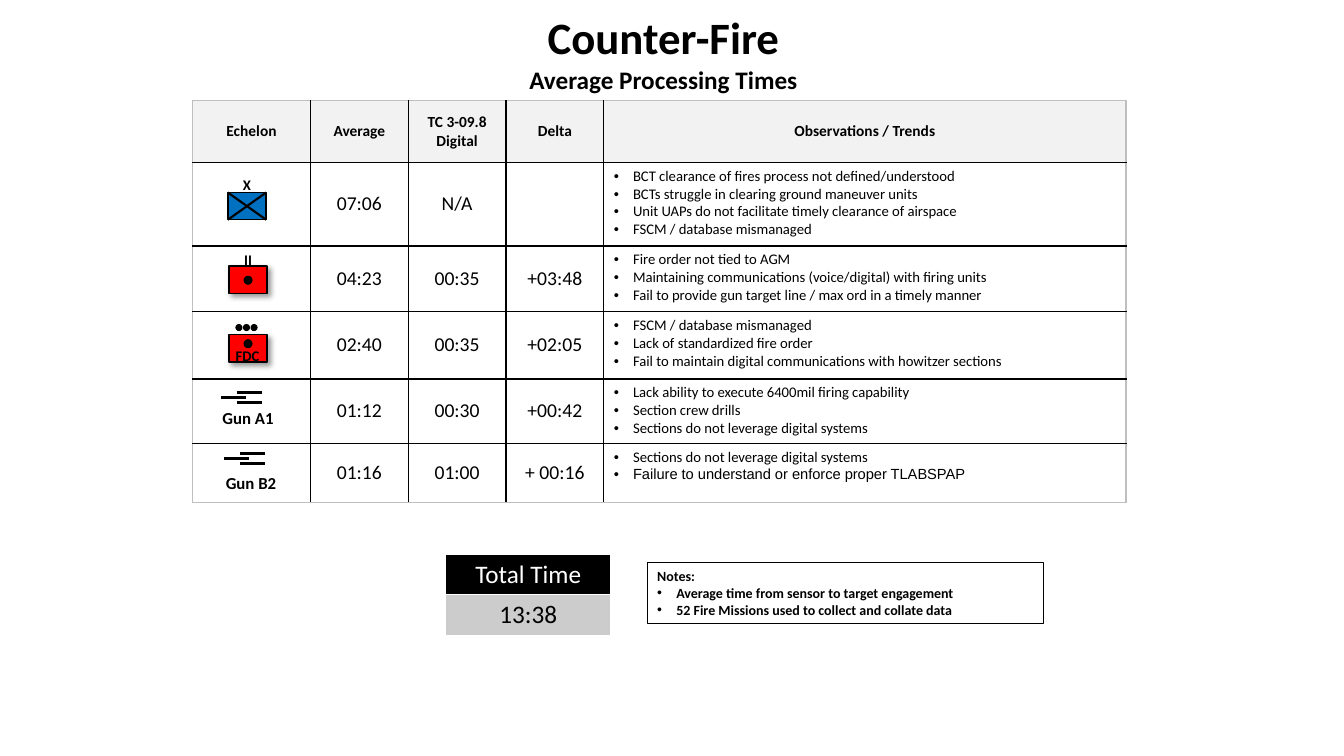
from dataclasses import dataclass

from lxml import etree
from pptx import Presentation
from pptx import util as u
from pptx.dml.color import RGBColor
from pptx.enum import shapes, text
from pptx.oxml import parse_xml
from pptx.oxml.ns import nsdecls, qn

PX = 9144  # 100 px to the inch


@dataclass(frozen=True)
class Theme:
    font: str = "Calibri"
    other_font: str = "Arial"
    black: str = "000000"
    white: str = "FFFFFF"
    header: str = "F2F2F2"
    edge: str = "BFBFBF"
    total: str = "CCCCCC"
    red: str = "FF0000"
    blue: str = "0070C0"
    title: float = 32
    subtitle: float = 18
    time: float = 14
    model: float = 12
    head: float = 11
    body: float = 10.5
    note: float = 10


THEME = Theme()
COLUMNS = [117, 97, 97, 97, 518]
ROWS = [61, 83, 65, 67, 64, 59]
HEADINGS = ["Echelon", "Average", "TC 3-09.8\nDigital", "Delta", "Observations / Trends"]
ECHELONS = [
    (["07:06", "N/A", ""],
     ["BCT clearance of fires process not defined/understood",
      "BCTs struggle in clearing ground maneuver units",
      "Unit UAPs do not facilitate timely clearance of airspace",
      "FSCM / database mismanaged"]),
    (["04:23", "00:35", "+03:48"],
     ["Fire order not tied to AGM",
      "Maintaining communications (voice/digital) with firing units",
      "Fail to provide gun target line / max ord in a timely manner"]),
    (["02:40", "00:35", "+02:05"],
     ["FSCM / database mismanaged",
      "Lack of standardized fire order",
      "Fail to maintain digital communications with howitzer sections"]),
    (["01:12", "00:30", "+00:42"],
     ["Lack ability to execute 6400mil firing capability",
      "Section crew drills",
      "Sections do not leverage digital systems"]),
    (["01:16", "01:00", "+ 00:16"],
     ["Sections do not leverage digital systems",
      "Failure to understand or enforce proper TLABSPAP"]),
]


def px(*lengths):
    return [u.Emu(round(length * PX)) for length in lengths]


def color(value):
    return RGBColor.from_string(value)


def write(frame, lines, size, bold=False, ink=THEME.black, centered=True, bullets_from=None):
    """Fill a text frame, one paragraph a line, with bullets from the given line on."""
    for index, line in enumerate(lines):
        paragraph = frame.paragraphs[0] if index == 0 else frame.add_paragraph()
        paragraph.alignment = text.PP_ALIGN.CENTER if centered else text.PP_ALIGN.LEFT
        if bullets_from is not None and index >= bullets_from:
            properties = paragraph._p.get_or_add_pPr()
            properties.set("marL", str(19 * PX))
            properties.set("indent", str(-19 * PX))
            etree.SubElement(properties, qn("a:buFont")).set("typeface", THEME.other_font)
            etree.SubElement(properties, qn("a:buChar")).set("char", "•")
        run = paragraph.add_run()
        run.text = line
        run.font.name, run.font.size, run.font.bold = THEME.font, u.Pt(size), bold
        run.font.color.rgb = color(ink)


def style_cell(cell, borders, fill=None):
    """Borders are colours in the order left, right, top, bottom."""
    properties = cell._tc.get_or_add_tcPr()
    for side, ink in zip("LRTB", borders):
        properties.append(parse_xml(
            f'<a:ln{side} {nsdecls("a")} w="12700"><a:solidFill>'
            f'<a:srgbClr val="{ink}"/></a:solidFill></a:ln{side}>'))
    if fill:
        cell.fill.solid()
        cell.fill.fore_color.rgb = color(fill)
    else:
        cell.fill.background()


def new_table(slide, left, top, columns, rows):
    table = slide.shapes.add_table(
        len(rows), len(columns), *px(left, top, sum(columns), sum(rows))).table
    table.first_row = table.horz_banding = False
    for column, width in zip(table.columns, columns):
        column.width = u.Emu(width * PX)
    for row, height in zip(table.rows, rows):
        row.height = u.Emu(height * PX)
    return table


def add_title(slide, left, top, width, height):
    title = slide.shapes.title
    title.left, title.top, title.width, title.height = px(left, top, width, height)
    frame = title.text_frame
    frame.auto_size, frame.word_wrap = text.MSO_AUTO_SIZE.NONE, True
    frame.vertical_anchor = text.MSO_ANCHOR.TOP
    write(frame, ["Counter-Fire", "Average Processing Times"], THEME.title, bold=True)
    frame.paragraphs[1].runs[0].font.size = u.Pt(THEME.subtitle)


def add_times_table(slide, left, top):
    table = new_table(slide, left, top, COLUMNS, ROWS)
    last_row, last_column = len(ROWS) - 1, len(COLUMNS) - 1
    for row in range(len(ROWS)):
        for column in range(len(COLUMNS)):
            outer = [column == 0, column == last_column, row == 0, row == last_row]
            cell = table.cell(row, column)
            style_cell(cell, [THEME.edge if side else THEME.black for side in outer],
                       THEME.header if row == 0 else None)
            cell.vertical_anchor = text.MSO_ANCHOR.MIDDLE
            if row == 0:
                write(cell.text_frame, HEADINGS[column].split("\n"), THEME.head, bold=True)
            elif column == last_column:
                cell.vertical_anchor = text.MSO_ANCHOR.TOP
                write(cell.text_frame, ECHELONS[row - 1][1], THEME.body,
                      centered=False, bullets_from=0)
            elif column and ECHELONS[row - 1][0][column - 1]:
                write(cell.text_frame, [ECHELONS[row - 1][0][column - 1]], THEME.time)
    final_run = table.cell(last_row, last_column).text_frame.paragraphs[-1].runs[0]
    final_run.font.name = THEME.other_font


def add_figure(group, kind, box, fill, weight):
    shape = group.shapes.add_shape(kind, *px(*box))
    shape.shadow.inherit = False
    shape.fill.solid()
    shape.fill.fore_color.rgb = color(fill)
    shape.line.color.rgb = color(THEME.black)
    shape.line.width = u.Pt(weight)
    return shape


def add_unit_frame(group, left, top, fill):
    return add_figure(group, shapes.MSO_SHAPE.RECTANGLE, (left, top, 38, 27), fill, 1)


def add_dot(group, left, top, size):
    add_figure(group, shapes.MSO_SHAPE.OVAL, (left, top, size, size), THEME.black, 0.75)


def add_line(group, start, end, weight):
    line = group.shapes.add_connector(shapes.MSO_CONNECTOR.STRAIGHT, *px(*start, *end))
    line.line.color.rgb = color(THEME.black)
    line.line.width = u.Pt(weight)
    etree.SubElement(line._element.spPr, qn("a:effectLst"))


def add_label(group, words, box, size):
    frame = group.shapes.add_textbox(*px(*box)).text_frame
    frame.word_wrap = True
    frame.margin_left = frame.margin_right = 0
    write(frame, [words], size, bold=True)


def add_brigade(group, left, top):
    add_label(group, "X", (left + 5, top - 22, 28, 28), THEME.body)
    add_unit_frame(group, left, top, THEME.blue)
    add_line(group, (left, top), (left + 38, top + 27), 1.5)
    add_line(group, (left, top + 27), (left + 38, top), 1.5)


def add_artillery(group, left, top, dot_drop):
    frame = add_unit_frame(group, left, top, THEME.red)
    effects = frame._element.spPr.find(qn("a:effectLst"))
    effects.append(parse_xml(
        f'<a:outerShdw {nsdecls("a")} blurRad="50800" dist="38100" dir="2700000">'
        '<a:srgbClr val="000000"><a:alpha val="40000"/></a:srgbClr></a:outerShdw>'))
    add_dot(group, left + 15, top + dot_drop, 8)


def add_battalion(group, left, top):
    add_artillery(group, left, top, 10)
    add_label(group, "II", (left, top - 20, 38, 28), THEME.body)


def add_fire_direction_center(group, left, top):
    add_artillery(group, left, top, 5)
    for index in range(3):
        add_dot(group, left + 7 + 7.5 * index, top - 10, 6)
    add_label(group, "FDC", (left - 22, top + 7, 81, 28), THEME.body)


def add_howitzer(group, left, top, model, label_drop):
    for shift, drop in [(16, 0), (16, 10), (0, 5)]:
        add_line(group, (left + shift, top + drop), (left + shift + 25, top + drop), 2.25)
    add_label(group, model, (left - 22, top + label_drop, 98, 30), THEME.model)


def add_symbols(slide, left, top):
    symbols = [
        (add_brigade, 35, 30, ()),
        (add_battalion, 36, 20, ()),
        (add_fire_direction_center, 36, 23, ()),
        (add_howitzer, 28, 13, ("Gun A1", 11)),
        (add_howitzer, 31, 10, ("Gun B2", 14)),
    ]
    for row, (draw, shift, drop, details) in enumerate(symbols, start=1):
        group = slide.shapes.add_group_shape()
        draw(group, left + shift, top + sum(ROWS[:row]) + drop, *details)


def add_total(slide, left, top):
    table = new_table(slide, left, top, [164], [40, 40])
    rows = [("Total Time", THEME.white, THEME.black), ("13:38", THEME.black, THEME.total)]
    for row, (words, ink, fill) in enumerate(rows):
        cell = table.cell(row, 0)
        style_cell(cell, [THEME.white] * 4, fill)
        write(cell.text_frame, [words], THEME.subtitle, ink=ink)


def add_notes_box(slide, *box):
    shape = add_figure(slide, shapes.MSO_SHAPE.RECTANGLE, box, THEME.white, 0.75)
    shape.fill.background()
    shape.text_frame.word_wrap = True
    shape.text_frame.vertical_anchor = text.MSO_ANCHOR.TOP
    write(shape.text_frame,
          ["Notes:", "Average time from sensor to target engagement",
           "52 Fire Missions used to collect and collate data"],
          THEME.note, bold=True, centered=False, bullets_from=1)


def main():
    presentation = Presentation()
    presentation.slide_width, presentation.slide_height = px(1333, 750)
    slide = presentation.slides.add_slide(presentation.slide_layouts[5])
    add_title(slide, 158, 5, 1000, 98)
    add_times_table(slide, 191, 100)
    add_symbols(slide, 191, 100)
    add_total(slide, 442, 550)
    add_notes_box(slide, 642, 558, 393, 61)
    presentation.save("out.pptx")


if __name__ == "__main__":
    main()
